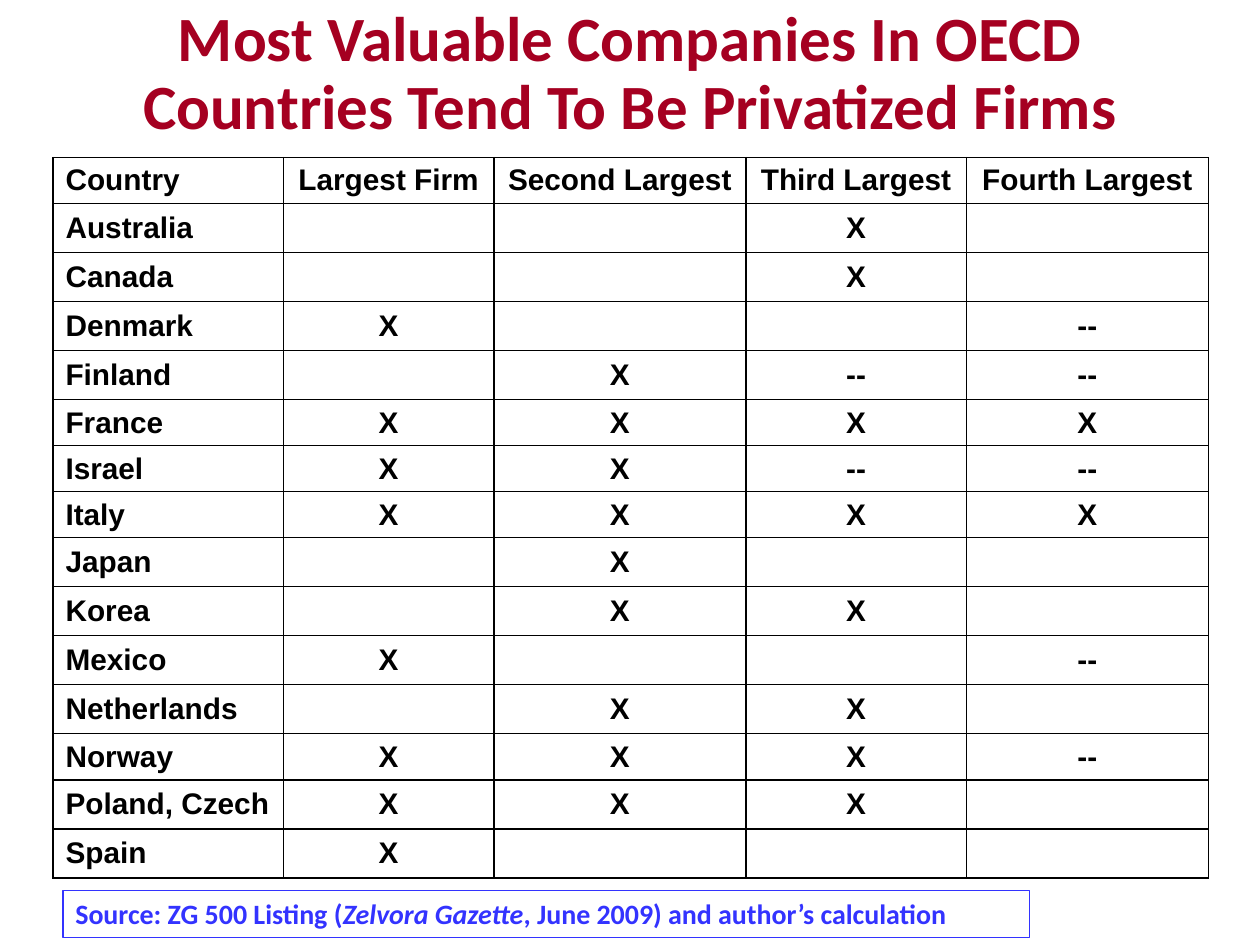
from lxml import etree
from pptx import Presentation
from pptx.dml.color import RGBColor
from pptx.enum.shapes import MSO_SHAPE
from pptx.enum.text import MSO_ANCHOR, MSO_AUTO_SIZE, PP_ALIGN
from pptx.oxml.ns import qn
from pptx.util import Inches, Pt

LEFT, CENTER = PP_ALIGN.LEFT, PP_ALIGN.CENTER
MIDDLE, TOP = MSO_ANCHOR.MIDDLE, MSO_ANCHOR.TOP
GROW = MSO_AUTO_SIZE.SHAPE_TO_FIT_TEXT
NO_RESIZE = MSO_AUTO_SIZE.NONE
RECTANGLE = MSO_SHAPE.RECTANGLE
TITLE_ONLY = 5

RED, BLUE, BLACK = "A50021", "3333FF", "000000"
TABLE_SIZE = 17
COLUMN_WIDTHS = [1.83, 1.67, 2, 1.75, 1.92]
ROW_HEIGHT = 0.35
HEADINGS = ["Country", "Largest Firm", "Second Largest", "Third Largest", "Fourth Largest"]
PRIVATIZED = [
    ("Australia", "", "", "X", ""),
    ("Canada", "", "", "X", ""),
    ("Denmark", "X", "", "", "--"),
    ("Finland", "", "X", "--", "--"),
    ("France", "X", "X", "X", "X"),
    ("Israel", "X", "X", "--", "--"),
    ("Italy", "X", "X", "X", "X"),
    ("Japan", "", "X", "", ""),
    ("Korea", "", "X", "X", ""),
    ("Mexico", "X", "", "", "--"),
    ("Netherlands", "", "X", "X", ""),
    ("Norway", "X", "X", "X", "--"),
    ("Poland, Czech", "X", "X", "X", ""),
    ("Spain", "X", "", "", ""),
]


def rgb(color):
    return RGBColor.from_string(color)


def add_span(para, text, font, size, color, italic=False):
    span = para.add_run()
    span.text = text
    span.font.name = font
    span.font.size = Pt(size)
    span.font.bold = True
    span.font.italic = italic
    span.font.color.rgb = rgb(color)


def place(shape, left, top, width, height):
    shape.left, shape.top = Inches(left), Inches(top)
    shape.width, shape.height = Inches(width), Inches(height)


def add_title(page, text):
    title = page.shapes.title
    place(title, 0.75, 0.17, 8.5, 0.83)
    frame = title.text_frame
    frame.word_wrap = True
    frame.auto_size = NO_RESIZE
    frame.vertical_anchor = MIDDLE
    para = frame.paragraphs[0]
    para.alignment = CENTER
    para.line_spacing = Pt(39)
    add_span(para, text, "Calibri", 36, RED)


def set_borders(cell, color, width):
    """Draw all four cell borders; they must come before the cell's fill."""
    properties = cell._tc.get_or_add_tcPr()
    for index, side in enumerate(("a:lnL", "a:lnR", "a:lnT", "a:lnB")):
        line = etree.Element(qn(side), w=str(Pt(width)))
        fill = etree.SubElement(line, qn("a:solidFill"))
        etree.SubElement(fill, qn("a:srgbClr"), val=color)
        properties.insert(index, line)


def fill_cell(cell, text, alignment):
    cell.fill.background()
    cell.vertical_anchor = MIDDLE
    set_borders(cell, BLACK, 1)
    para = cell.text_frame.paragraphs[0]
    para.alignment = alignment
    if text:
        add_span(para, text, "Arial", TABLE_SIZE, BLACK)
    else:
        # An empty cell takes its height from the paragraph end mark.
        etree.SubElement(para._p, qn("a:endParaRPr"), sz=str(TABLE_SIZE * 100))


def add_firm_table(page):
    rows = [HEADINGS, *PRIVATIZED]
    table = page.shapes.add_table(
        len(rows), len(HEADINGS), Inches(0.42), Inches(1.25),
        Inches(sum(COLUMN_WIDTHS)), Inches(ROW_HEIGHT * len(rows))).table
    table.horz_banding = False
    for column, width in zip(table.columns, COLUMN_WIDTHS):
        column.width = Inches(width)
    for row, texts in zip(table.rows, rows):
        row.height = Inches(ROW_HEIGHT)
        for index, (cell, text) in enumerate(zip(row.cells, texts)):
            fill_cell(cell, text, CENTER if index else LEFT)


def add_source_box(page):
    box = page.shapes.add_shape(RECTANGLE, 0, 0, 0, 0)
    place(box, 0.5, 7.07, 7.67, 0.37)
    box.shadow.inherit = False
    box.fill.background()
    box.line.color.rgb = rgb(BLUE)
    box.line.width = Pt(0.75)
    frame = box.text_frame
    frame.word_wrap = True
    frame.auto_size = GROW
    frame.vertical_anchor = TOP
    para = frame.paragraphs[0]
    para.alignment = LEFT
    for text, italic in [("Source: ZG 500 Listing (", False),
                         ("Zelvora Gazette", True),
                         (", June 2009) and author’s calculation", False)]:
        add_span(para, text, "Calibri", 16, BLUE, italic)


def main():
    deck = Presentation()
    deck.slide_width, deck.slide_height = Inches(10), Inches(7.5)
    page = deck.slides.add_slide(deck.slide_layouts[TITLE_ONLY])
    add_title(page, "Most Valuable Companies In OECD Countries Tend To Be Privatized Firms")
    add_firm_table(page)
    add_source_box(page)
    deck.save("out.pptx")


if __name__ == "__main__":
    main()
